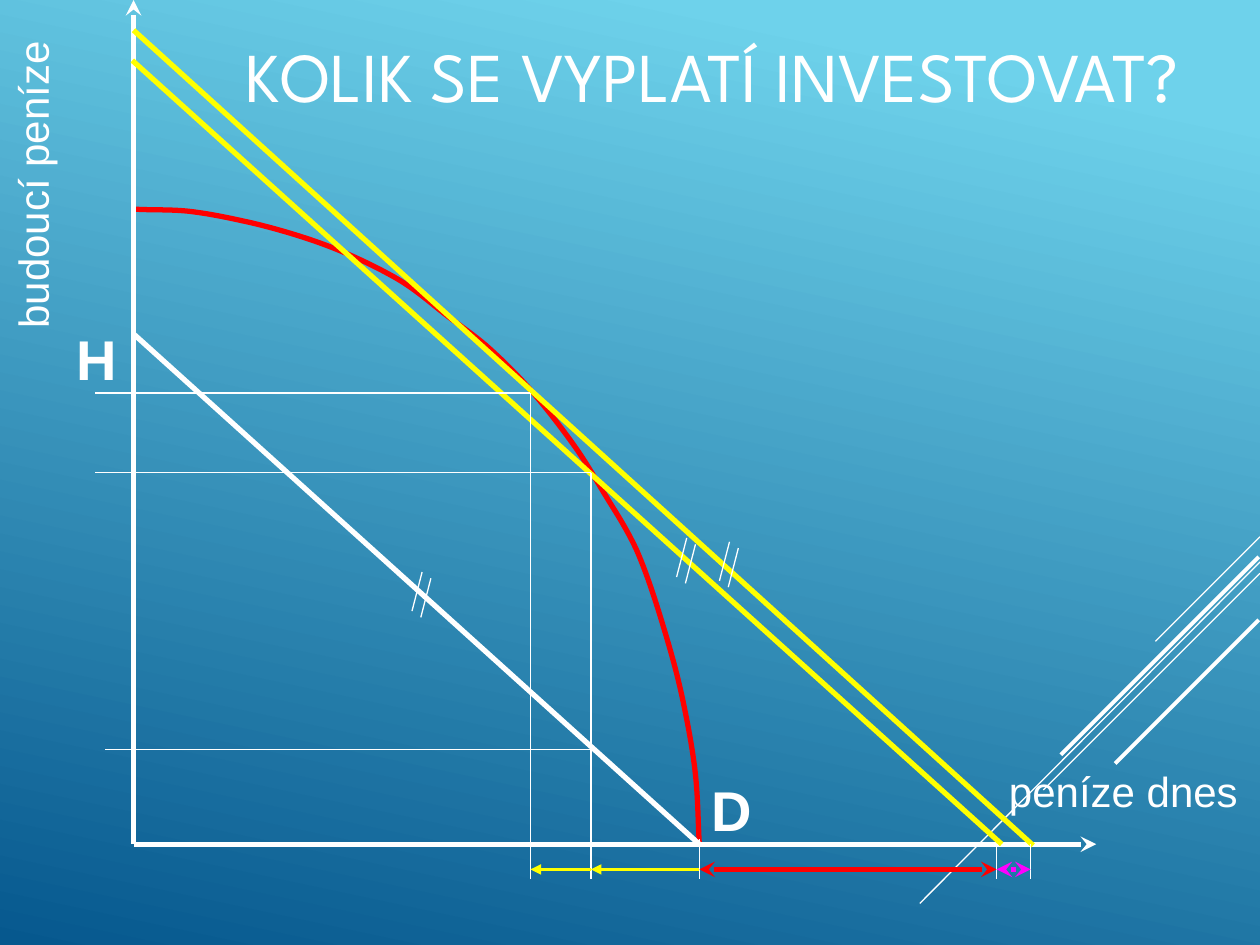
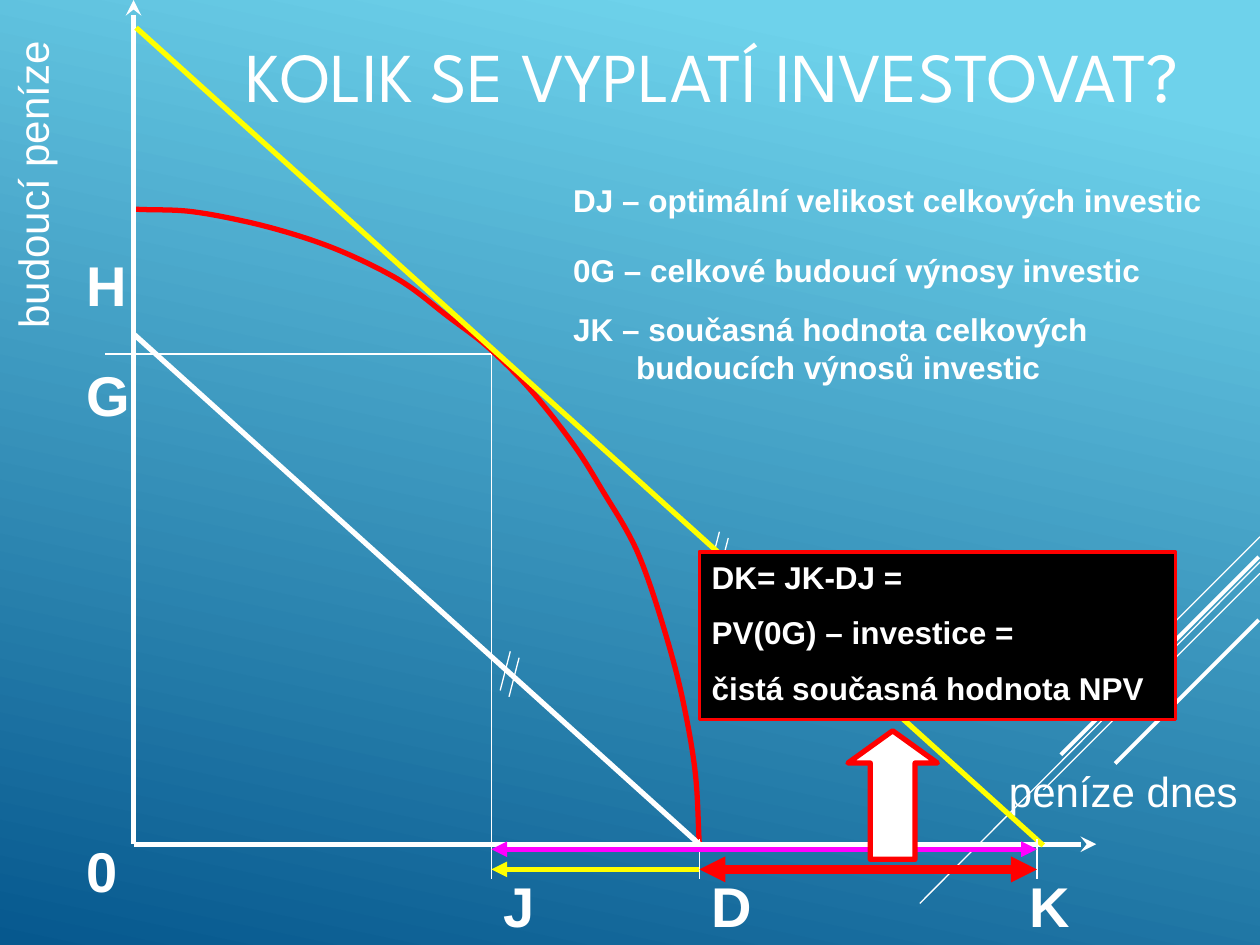
from dataclasses import dataclass

from lxml import etree
from pptx import Presentation
from pptx.dml.color import RGBColor
from pptx.enum.shapes import MSO_CONNECTOR, MSO_SHAPE
from pptx.enum.text import MSO_ANCHOR, PP_ALIGN
from pptx.oxml.ns import qn
from pptx.util import Inches, Pt

STRAIGHT = MSO_CONNECTOR.STRAIGHT
RECTANGLE = MSO_SHAPE.RECTANGLE
UP_ARROW = MSO_SHAPE.UP_ARROW
TOP, MIDDLE = MSO_ANCHOR.TOP, MSO_ANCHOR.MIDDLE
LEFT = PP_ALIGN.LEFT


@dataclass(frozen=True)
class Theme:
    white: str = "FFFFFF"
    black: str = "000000"
    red: str = "FF0000"
    yellow: str = "FFFF00"
    magenta: str = "FF00FF"
    sky: str = "6ED2EB"
    sea: str = "06588E"
    title_font: str = "League Spartan"
    body_font: str = "Arial"
    title_size: int = 40
    point_size: int = 32
    axis_size: int = 24
    note_size: int = 18
    paragraph_gap: int = 10
    thin: float = 0.75
    medium: float = 2
    stripe: float = 2.25
    thick: float = 3
    heavy: float = 5


THEME = Theme()

# Chart geometry in inches
ORIGIN_X, ORIGIN_Y = 1.06, 6.7
POINT_H = (ORIGIN_X, 2.65)
POINT_D = (5.55, ORIGIN_Y)
ARROW_Y, GUIDE_END_Y = 6.9, 6.98
INVESTMENT_CURVE = [
    POINT_D, (5.52, 6.15), (5.42, 5.56), (5.27, 4.99), (5.05, 4.36),
    (4.81, 3.94), (4.58, 3.57), (4.25, 3.14), (3.9, 2.78), (3.54, 2.5),
    (3.13, 2.2), (2.57, 1.94), (2, 1.77), (1.52, 1.68), (ORIGIN_X, 1.66),
]
STRIPES = [
    ((10, 4.26), (9.17, 5.09), THEME.thin),
    ((10, 4.46), (7.3, 7.17), THEME.thin),
    ((10, 4.55), (8.28, 6.27), THEME.thin),
    ((9.99, 4.42), (8.42, 5.99), THEME.stripe),
    ((9.99, 4.92), (8.85, 6.06), THEME.stripe),
]


def color(code):
    return RGBColor.from_string(code)


def write_text(frame, text, size, font=THEME.body_font, bold=False, anchor=TOP):
    """Fill a text frame, one paragraph for each line of text."""
    frame.word_wrap = True
    frame.vertical_anchor = anchor
    for index, line in enumerate(text.split("\n")):
        paragraph = frame.add_paragraph() if index else frame.paragraphs[0]
        paragraph.text = line
        paragraph.alignment = LEFT
        if index:
            paragraph.space_before = Pt(THEME.paragraph_gap)
        paragraph.font.name = font
        paragraph.font.size = Pt(size)
        paragraph.font.bold = bold
        paragraph.font.color.rgb = color(THEME.white)


def bezier_points(anchors):
    """Return two control points and an end for each step of a smooth curve."""
    def mirror(end, neighbour):
        return tuple(2 * a - b for a, b in zip(end, neighbour))

    padded = [mirror(anchors[0], anchors[1]), *anchors,
              mirror(anchors[-1], anchors[-2])]
    points = []
    for before, start, end, after in zip(padded, padded[1:], padded[2:], padded[3:]):
        points.append(tuple(s + (e - b) / 6 for b, s, e in zip(before, start, end)))
        points.append(tuple(e - (a - s) / 6 for s, e, a in zip(start, end, after)))
        points.append(end)
    return points


class DiagramSlide:
    def __init__(self, presentation, theme=THEME):
        self.theme = theme
        self.slide = presentation.slides.add_slide(presentation.slide_layouts[6])
        self.background()
        for start, end, width in STRIPES:
            self.line(start, end, width=width)

    def background(self):
        fill = self.slide.background.fill
        fill.gradient()
        fill.gradient_angle = 360 - 102
        stops = ((0.1, self.theme.sky), (1, self.theme.sea))
        for stop, (position, code) in zip(fill.gradient_stops, stops):
            stop.position = position
            stop.color.rgb = color(code)

    def line(self, start, end, code=THEME.white, width=THEME.thin, head=None, tail=None):
        ends = [Inches(value) for value in (*start, *end)]
        connector = self.slide.shapes.add_connector(STRAIGHT, *ends)
        connector.line.color.rgb = color(code)
        connector.line.width = Pt(width)
        properties = connector.element.spPr
        outline = properties.find(qn("a:ln"))
        for tag, kind in (("a:headEnd", head), ("a:tailEnd", tail)):
            if kind:
                etree.SubElement(outline, qn(tag), type=kind)
        etree.SubElement(properties, qn("a:effectLst"))

    def text(self, text, left, top, width, height, rotation=0, **text_format):
        box = self.slide.shapes.add_textbox(*map(Inches, (left, top, width, height)))
        box.rotation = rotation
        write_text(box.text_frame, text, **text_format)

    def point_label(self, letter, left, top):
        self.text(letter, left, top, 0.47, 0.63, size=self.theme.point_size, bold=True)

    def note(self, text, top, height=0.4):
        self.text(text, 4.45, top, 5.28, height, size=self.theme.note_size, bold=True)

    def shape(self, kind, left, top, width, height, fill, line_width):
        shape = self.slide.shapes.add_shape(kind, *map(Inches, (left, top, width, height)))
        shape.shadow.inherit = False
        shape.fill.solid()
        shape.fill.fore_color.rgb = color(fill)
        shape.line.color.rgb = color(self.theme.red)
        shape.line.width = Pt(line_width)
        return shape

    def curve(self, anchors, code):
        hundredths = [(100 * x, 100 * y) for x, y in bezier_points(anchors)]
        start_x, start_y = anchors[0]
        builder = self.slide.shapes.build_freeform(
            round(100 * start_x), round(100 * start_y), scale=Inches(0.01))
        builder.add_line_segments(hundredths, close=False)
        shape = builder.convert_to_shape()
        shape.shadow.inherit = False
        shape.fill.background()
        shape.line.color.rgb = color(code)
        shape.line.width = Pt(self.theme.thick)
        outline = next(shape.element.iter(qn("a:path")))
        segments = outline.findall(qn("a:lnTo"))
        for first in range(0, len(segments), 3):
            bezier = etree.SubElement(outline, qn("a:cubicBezTo"))
            for segment in segments[first:first + 3]:
                bezier.append(segment[0])
                outline.remove(segment)

    def parallel_mark(self, x, y):
        """Draw the two short strokes that mark parallel lines."""
        for left, top in ((x, y), (x + 0.07, y + 0.05)):
            self.line((left, top), (left - 0.08, top + 0.31))

    def drop_guide(self, x, top=6.66):
        self.line((x, top), (x, GUIDE_END_Y))

    def span(self, start_x, end_x, code, y=ARROW_Y, **line_format):
        """Draw a horizontal arrow that measures a stretch of the axis."""
        self.line((start_x, y), (end_x, y), code, **line_format)

    def investment_diagram(self):
        theme = self.theme
        self.curve(INVESTMENT_CURVE, theme.red)
        self.text("KOLIK SE VYPLATÍ INVESTOVAT?", 1.85, -0.03, 9, 1.25,
                  size=theme.title_size, font=theme.title_font, anchor=MIDDLE)
        for axis_end in ((8.7, ORIGIN_Y), (ORIGIN_X, 0)):
            self.line((ORIGIN_X, ORIGIN_Y), axis_end, width=theme.thick, tail="stealth")
        self.text("peníze dnes", 7.91, 6.03, 2.13, 0.5, size=theme.axis_size)
        self.text("budoucí peníze", -1.1, 1.1, 2.71, 0.5, rotation=270,
                  size=theme.axis_size)
        self.line(POINT_H, POINT_D, width=theme.thick)
        self.drop_guide(POINT_D[0])


def build_comparison(presentation):
    theme = THEME
    page = DiagramSlide(presentation)
    page.investment_diagram()
    page.line((1.05, 0.48), (7.95, 6.7), theme.yellow, theme.thick)
    page.line((ORIGIN_X, 0.24), (8.2, 6.71), theme.yellow, theme.thick)
    page.point_label("D", 5.55, 6.11)
    page.point_label("H", 0.51, 2.53)

    first_x, second_x, value_x, best_x = 4.69, 4.21, 7.91, 8.18
    for x, y in ((first_x, 3.75), (second_x, 3.12)):
        page.drop_guide(x, y)
        page.line((x, y), (0.75, y))
    page.line((first_x, 5.95), (0.83, 5.95))
    page.drop_guide(value_x, ORIGIN_Y)
    page.drop_guide(best_x, ORIGIN_Y)

    for start_x, end_x in ((POINT_D[0], first_x), (first_x, second_x)):
        page.span(start_x, end_x, theme.yellow, width=theme.medium, tail="triangle")
    for start_x, end_x, code in ((POINT_D[0], value_x, theme.red),
                                 (value_x, best_x, theme.magenta)):
        page.span(start_x, end_x, code, width=theme.thick, head="stealth", tail="stealth")
    for x, y in ((3.35, 4.54), (5.45, 4.27), (5.79, 4.3)):
        page.parallel_mark(x, y)


def build_optimum(presentation):
    theme = THEME
    page = DiagramSlide(presentation)
    page.investment_diagram()
    for x, y in ((4.05, 5.17), (5.71, 4.22)):
        page.parallel_mark(x, y)
    page.line((1.08, 0.22), (8.28, 6.71), theme.yellow, theme.thick)

    j_x, g_y, k_x = 3.9, 2.81, 8.23
    page.drop_guide(j_x, g_y)
    page.line((j_x, g_y), (0.83, g_y))
    page.drop_guide(k_x)
    for letter, left in (("J", j_x), ("D", POINT_D[0]), ("K", 8.07)):
        page.point_label(letter, left, 6.87)
    for letter, top in (("H", 1.94), ("G", g_y), ("0", 6.59)):
        page.point_label(letter, 0.59, top)

    page.note("DJ – optimální velikost celkových investic", 1.39)
    page.note("0G – celkové budoucí výnosy investic", 1.94)
    page.note("JK – současná hodnota celkových\v\tbudoucích výnosů investic", 2.41, 0.7)

    page.span(POINT_D[0], j_x, theme.yellow, width=theme.thick, tail="triangle")
    page.span(j_x, k_x, theme.magenta, y=6.74, width=theme.thick,
              head="triangle", tail="triangle")
    page.span(POINT_D[0], k_x, theme.red, width=theme.heavy,
              head="triangle", tail="triangle")

    npv_box = page.shape(RECTANGLE, 5.55, 4.38, 3.78, 1.33, theme.black, theme.medium)
    write_text(npv_box.text_frame,
               "DK= JK-DJ =\nPV(0G) – investice =\nčistá současná hodnota NPV",
               size=theme.note_size, bold=True)
    npv_arrow = page.shape(UP_ARROW, 6.73, 5.8, 0.71, 1.02, theme.white, theme.thick)
    npv_arrow.adjustments[0] = 0.5
    npv_arrow.adjustments[1] = 0.36


def main():
    presentation = Presentation()
    presentation.slide_width = Inches(10)
    presentation.slide_height = Inches(7.5)
    build_comparison(presentation)
    build_optimum(presentation)
    presentation.save("out.pptx")


if __name__ == "__main__":
    main()
